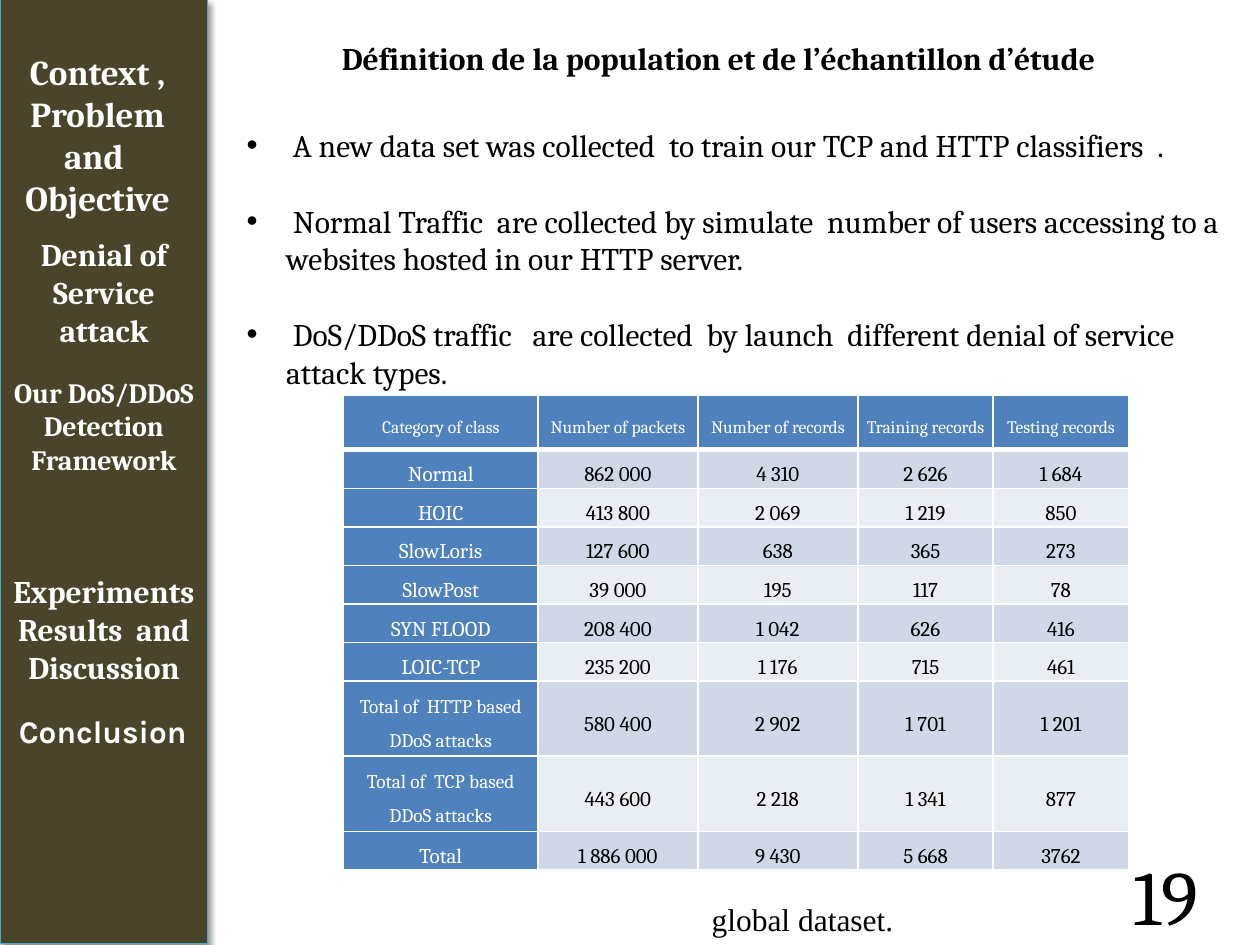
import pptx
import pptx.dml.color
import pptx.enum.shapes
import pptx.enum.text
import pptx.oxml
import pptx.oxml.ns
import pptx.util
from lxml import etree

Pt = pptx.util.Pt
ALIGN = pptx.enum.text.PP_ALIGN
ANCHOR = pptx.enum.text.MSO_ANCHOR
qn = pptx.oxml.ns.qn

# Content
TITLE = "Définition de la population et de l’échantillon d’étude"
BULLETS = [
    " A new data set was collected  to train our TCP and HTTP classifiers  .",
    " Normal Traffic  are collected by simulate  number of users accessing to a websites hosted in our HTTP server.",
    " DoS/DDoS traffic   are collected  by launch  different denial of service attack types.",
]
# Section name, left, top, width, height, size, font
SECTIONS = [
    ("Context , Problem and  Objective", -3.6, 25.2, 118.8, 104.4, 20, "Cambria"),
    ("Denial of Service attack", 0, 131, 118.8, 72.7, 18, "Cambria"),
    ("Our DoS/DDoS Detection Framework", -3.6, 211, 126, 86, 16, "Cambria"),
    ("Experiments Results  and Discussion", 0, 323.3, 118.8, 72.7, 18, "Cambria"),
    ("Conclusion", -0.72, 403.2, 118.8, 28.8, 18, "Karla"),
]
RECORDS = [
    ("Category of class", "Number of packets", "Number of records", "Training records", "Testing records"),
    ("Normal", "862 000", "4 310", "2 626", "1 684"),
    ("HOIC", "413 800", "2 069", "1 219", "850"),
    ("SlowLoris", "127 600", "638", "365", "273"),
    ("SlowPost", "39 000", "195", "117", "78"),
    ("SYN FLOOD", "208 400", "1 042", "626", "416"),
    ("LOIC-TCP", "235 200", "1 176", "715", "461"),
    ("Total of  HTTP based DDoS attacks", "580 400", "2 902", "1 701", "1 201"),
    ("Total of  TCP based DDoS attacks", "443 600", "2 218", "1 341", "877"),
    ("Total", "1 886 000", "9 430", "5 668", "3762"),
]
COLUMN_WIDTHS = [111, 91.4, 91.4, 77.4, 77.4]
ROW_HEIGHTS = [31] + [22.05] * 6 + [43] * 2 + [22.05]
HEADER_FILL = "4F81BD"
BAND_FILLS = ["E9EDF4", "D0D8E8"]


def color(value):
    return pptx.dml.color.RGBColor.from_string(value)


def style(paragraph, size, ink="000000", font="Cambria", bold=False, align=ALIGN.CENTER):
    paragraph.alignment = align
    paragraph.font.size = Pt(size)
    paragraph.font.name = font
    paragraph.font.bold = bold
    paragraph.font.color.rgb = color(ink)


def add_text(slide, text, left, top, width, height):
    box = slide.shapes.add_textbox(Pt(left), Pt(top), Pt(width), Pt(height))
    box.text_frame.word_wrap = True
    box.text_frame.text = text
    return box.text_frame


def add_bullet(paragraph):
    properties = paragraph._p.get_or_add_pPr()
    properties.set("marL", str(Pt(22.5)))
    properties.set("indent", str(-Pt(22.5)))
    etree.SubElement(properties, qn("a:buFont"), typeface="Arial")
    etree.SubElement(properties, qn("a:buChar"), char="•")


def add_borders(cell, bottom):
    properties = cell._tc.get_or_add_tcPr()
    for position, (side, width) in enumerate([("L", 1), ("R", 1), ("T", 1), ("B", bottom)]):
        line = etree.Element(qn("a:ln" + side), w=str(Pt(width)))
        fill = etree.SubElement(line, qn("a:solidFill"))
        etree.SubElement(fill, qn("a:srgbClr"), val="FFFFFF")
        properties.insert(position, line)


def add_soft_shadow(shape):
    shape.shadow.inherit = False
    effects = shape._element.spPr.find(qn("a:effectLst"))
    shadow = etree.SubElement(effects, qn("a:outerShdw"), blurRad=str(Pt(4)), dist=str(Pt(2)),
                              dir="5400000", rotWithShape="0")
    black = etree.SubElement(shadow, qn("a:srgbClr"), val="000000")
    etree.SubElement(black, qn("a:alpha"), val="45000")


presentation = pptx.Presentation()
presentation.slide_width, presentation.slide_height = Pt(720), Pt(540)
slide = presentation.slides.add_slide(presentation.slide_layouts[5])

# Title
title = slide.shapes.title
title.left, title.top, title.width, title.height = Pt(167), Pt(18.7), Pt(487.4), Pt(51)
title.text_frame.text = TITLE
title.text_frame.vertical_anchor = ANCHOR.TOP
title.text_frame.auto_size = pptx.enum.text.MSO_AUTO_SIZE.NONE
style(title.text_frame.paragraphs[0], 18, bold=True)

# Bullets
frame = add_text(slide, "\n".join(BULLETS), 133.9, 68.4, 573.8, 181.4)
for index, paragraph in enumerate(frame.paragraphs):
    add_bullet(paragraph)
    style(paragraph, 18, align=ALIGN.LEFT)
    if index:
        paragraph.space_before = Pt(21.6)

# Data set table
table = slide.shapes.add_table(len(RECORDS), len(COLUMN_WIDTHS), Pt(196.4), Pt(226),
                               Pt(sum(COLUMN_WIDTHS)), Pt(sum(ROW_HEIGHTS))).table
table.first_row = table.horz_banding = False
for column, width in zip(table.columns, COLUMN_WIDTHS):
    column.width = Pt(width)
for row_index, (record, height) in enumerate(zip(RECORDS, ROW_HEIGHTS)):
    table.rows[row_index].height = Pt(height)
    for column_index, text in enumerate(record):
        cell = table.cell(row_index, column_index)
        is_header = row_index == 0 or column_index == 0
        size = 10 if row_index == 0 else 11 if text.startswith("Total of") else 12
        cell.text = text
        cell.margin_left = cell.margin_right = Pt(4.3)
        cell.margin_top = cell.margin_bottom = 0
        cell.vertical_anchor = ANCHOR.MIDDLE
        cell.fill.solid()
        cell.fill.fore_color.rgb = color(HEADER_FILL if is_header else BAND_FILLS[row_index % 2])
        add_borders(cell, bottom=3 if row_index == 0 else 1)
        paragraph = cell.text_frame.paragraphs[0]
        style(paragraph, size, "FFFFFF" if is_header else "000000")
        paragraph.line_spacing = 1.5

# Table caption
caption = add_text(slide, "global dataset.", 198, 499.7, 319.7, 40.3).paragraphs[0]
style(caption, 18, font="Times New Roman", align=ALIGN.RIGHT)
caption.line_spacing = 1.5

# Sidebar with section names
sidebar = slide.shapes.add_shape(pptx.enum.shapes.MSO_SHAPE.RECTANGLE, 0, Pt(-0.7), Pt(118.8), Pt(540))
sidebar.fill.solid()
sidebar.fill.fore_color.rgb = color("4A452A")
sidebar.line.color.rgb = color("4BACC6")
sidebar.line.width = Pt(0.75)
add_soft_shadow(sidebar)
for name, left, top, width, height, size, font in SECTIONS:
    frame = add_text(slide, name, left, top, width, height)
    style(frame.paragraphs[0], size, "FFFFFF", font, bold=True)

# Page number
frame = add_text(slide, "19", 530, 486.7, 162, 49)
frame.vertical_anchor = ANCHOR.MIDDLE
style(frame.paragraphs[0], 44, align=ALIGN.RIGHT)

presentation.save("out.pptx")
